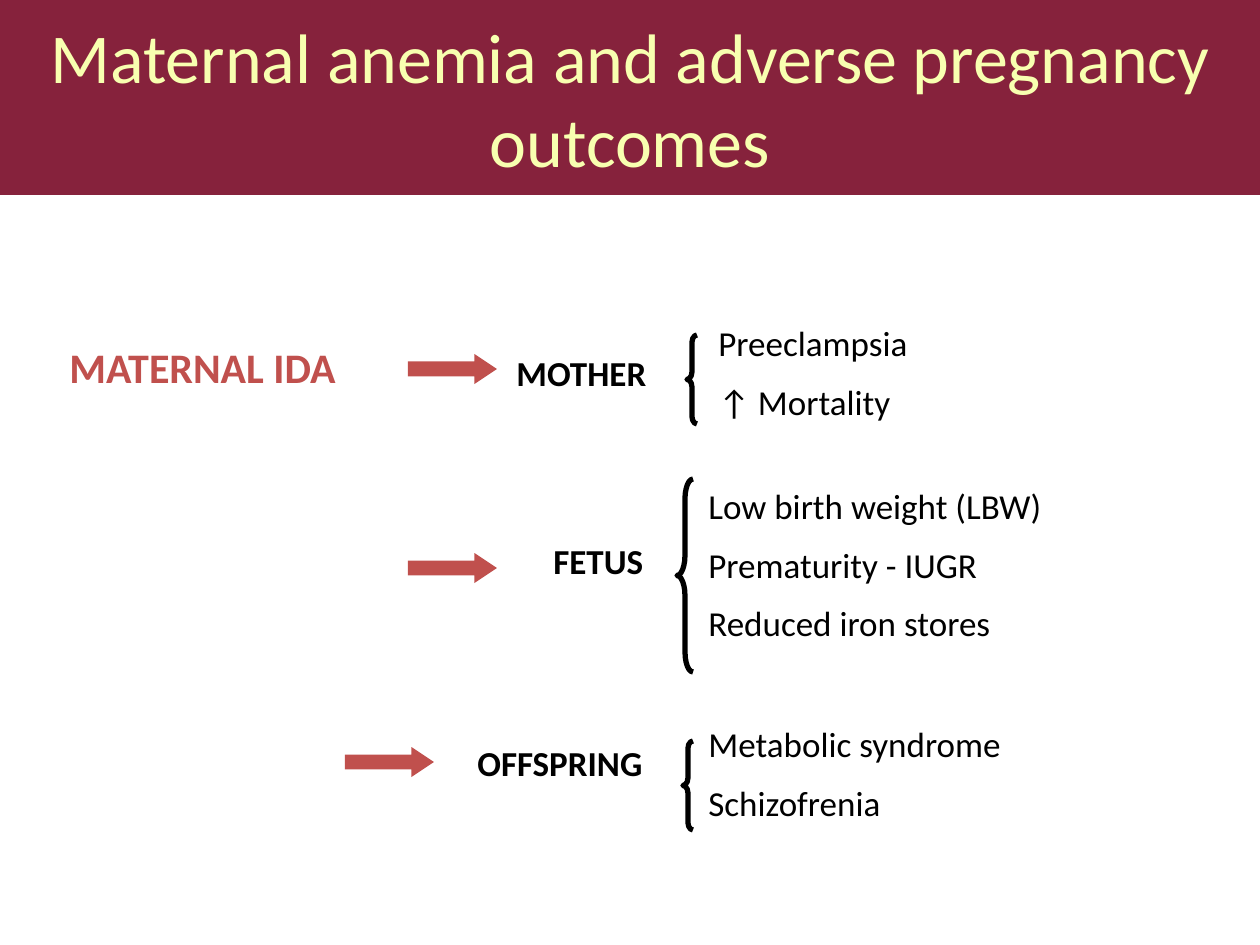
from pptx import Presentation
from pptx.dml.color import RGBColor
from pptx.enum.shapes import MSO_SHAPE
from pptx.enum.text import MSO_ANCHOR, MSO_AUTO_SIZE, PP_ALIGN
from pptx.util import Emu, Pt

RIGHT_ARROW = MSO_SHAPE.RIGHT_ARROW
LEFT_BRACE = MSO_SHAPE.LEFT_BRACE
LEFT, CENTER = PP_ALIGN.LEFT, PP_ALIGN.CENTER
TOP, MIDDLE = MSO_ANCHOR.TOP, MSO_ANCHOR.MIDDLE
NO_AUTOFIT = MSO_AUTO_SIZE.NONE

PX = 914400 / 126
FONT = "Calibri"
BLACK = "000000"
RED = "C0504D"
MAROON = "86223C"
CREAM = "F8FFB0"


def place(*lengths):
    """Turn pixel lengths into EMU."""
    return [Emu(round(length * PX)) for length in lengths]


def write_text(shape, lines, size=20, color=BLACK, bold=False, align=LEFT, anchor=TOP):
    frame = shape.text_frame
    frame.word_wrap = True
    frame.auto_size = NO_AUTOFIT
    frame.vertical_anchor = anchor
    frame.text = "\n".join(lines)
    for index, paragraph in enumerate(frame.paragraphs):
        paragraph.alignment = align
        paragraph.space_before = Pt(9.6 if index else 0)
        font = paragraph.runs[0].font
        font.name = FONT
        font.size = Pt(size)
        font.bold = bold
        font.color.rgb = RGBColor.from_string(color)


presentation = Presentation()
presentation.slide_width, presentation.slide_height = place(1260, 945)
slide = presentation.slides.add_slide(presentation.slide_layouts[5])
shapes = slide.shapes

title = shapes.title
title.left, title.top, title.width, title.height = place(0, 0, 1260, 195)
title.fill.solid()
title.fill.fore_color.rgb = RGBColor.from_string(MAROON)
write_text(title, ["Maternal anemia and adverse pregnancy outcomes"],
           size=40, color=CREAM, align=CENTER, anchor=MIDDLE)

cause = shapes.add_textbox(*place(57, 335, 353, 127))
write_text(cause, ["MATERNAL IDA"], size=24, color=RED, bold=True)

# Arrow left and top, label and its box, brace box and bend, outcomes and their box
groups = [
    ((408, 354), "MOTHER", (504, 345, 183, 55), (687, 335, 10, 89), 0.74,
     ["Preeclampsia", "↑ Mortality"], (706, 315, 367, 118)),
    ((408, 553), "FETUS", (541, 533, 149, 55), (677, 479, 16, 193), 1.25,
     ["Low birth weight (LBW)", "Prematurity - IUGR", "Reduced iron stores"],
     (696, 478, 476, 178)),
    ((345, 747), "OFFSPRING", (465, 735, 252, 55), (683, 741, 10, 89), 0.74,
     ["Metabolic syndrome", "Schizofrenia"], (696, 716, 476, 118)),
]

for arrow_corner, label, label_box, brace_box, bend, outcomes, outcome_box in groups:
    arrow = shapes.add_shape(RIGHT_ARROW, *place(*arrow_corner, 89, 30))
    arrow.shadow.inherit = False
    arrow.adjustments[0] = 0.5
    arrow.adjustments[1] = 0.75
    arrow.fill.solid()
    arrow.fill.fore_color.rgb = RGBColor.from_string(RED)
    arrow.line.fill.background()

    write_text(shapes.add_textbox(*place(*label_box)), [label], bold=True)
    write_text(shapes.add_textbox(*place(*outcome_box)), outcomes)

    brace = shapes.add_shape(LEFT_BRACE, *place(*brace_box))
    brace.shadow.inherit = False
    brace.adjustments[0] = bend
    brace.adjustments[1] = 0.5
    brace.fill.background()
    brace.line.color.rgb = RGBColor.from_string(BLACK)
    brace.line.width = Pt(3)

presentation.save("out.pptx")
